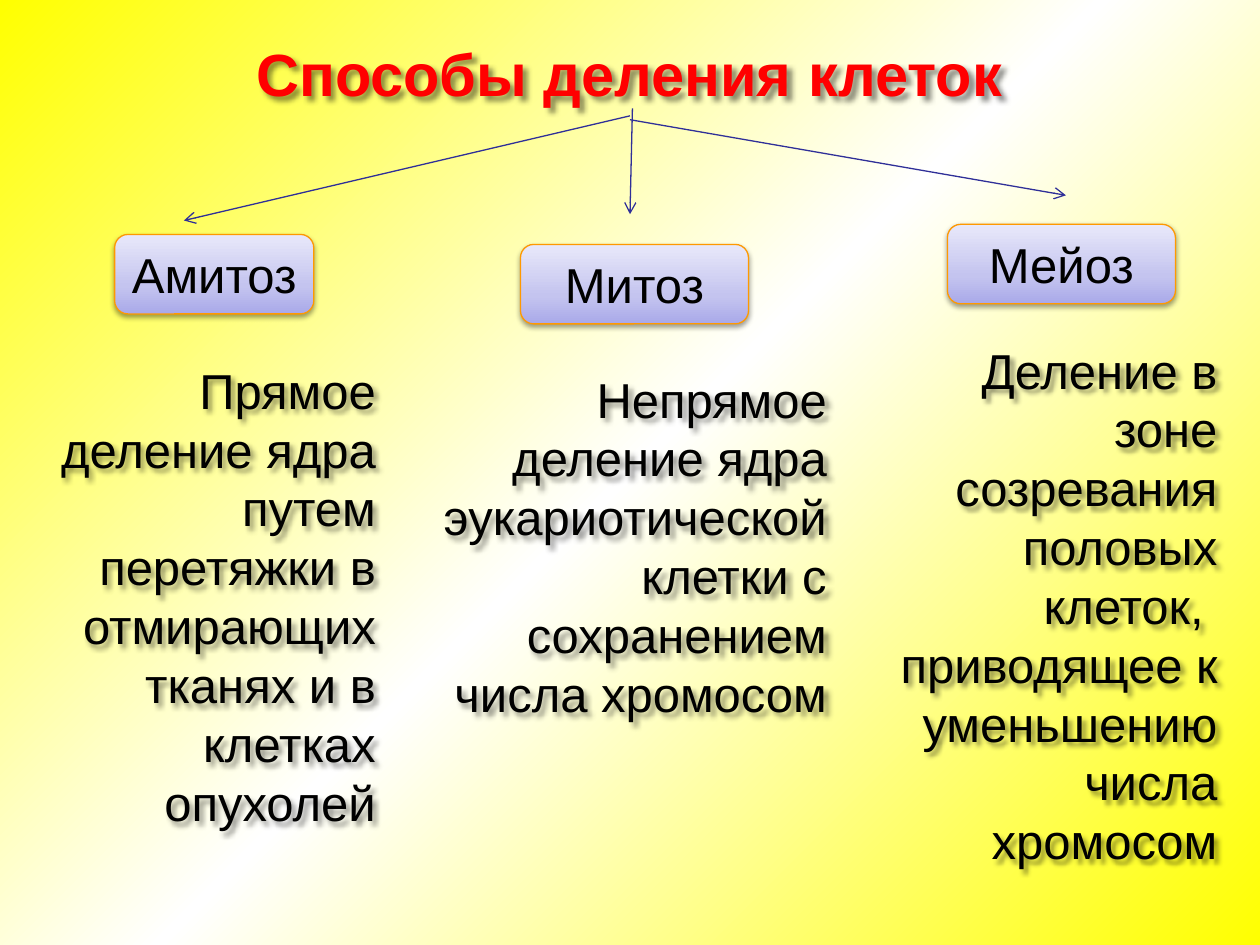
from dataclasses import dataclass
from typing import Any

from lxml.etree import SubElement
from pptx import Presentation
from pptx.dml.color import RGBColor
from pptx.enum.shapes import MSO_CONNECTOR, MSO_SHAPE
from pptx.enum.text import MSO_ANCHOR, MSO_AUTO_SIZE, PP_ALIGN
from pptx.oxml.ns import qn
from pptx.util import Pt


@dataclass(frozen=True)
class Theme:
    """Colours, fonts and type sizes of the slide."""

    font: str = "Arial"
    body: float = 28
    head: float = 34
    ink: str = "000000"
    title: str = "FF0000"
    arrow: str = "2F2F98"
    edge: str = "FF9900"
    line: float = 0.75
    back: tuple = ((0, "FFFF00"), (50, "FFFFFF"), (100, "FFFF00"))
    box: tuple = ((0, "A9A9E9"), (35, "C4C4EF"), (100, "E8E8FA"))


@dataclass(frozen=True)
class Area:
    """A rectangle in points."""

    left: float
    top: float
    width: float
    height: float

    def place(self) -> tuple:
        """Return the four lengths for python-pptx."""
        return Pt(self.left), Pt(self.top), Pt(self.width), Pt(self.height)


@dataclass(frozen=True)
class Kind:
    """A kind of cell division with its arrow, label box and text."""

    name: str
    label: Area
    wrap: bool
    text: str
    body: Area
    start: tuple
    end: tuple


THEME = Theme()
KINDS = (
    Kind("Амитоз", Area(65.5, 134, 113.8, 45.4), False,
         "Прямое деление ядра путем перетяжки в отмирающих тканях и в клетках опухолей",
         Area(20.2, 202.3, 201.6, 278.6), (360, 66.2), (105.1, 126)),
    Kind("Митоз", Area(297.4, 139.7, 130.3, 45.4), True,
         "Непрямое деление ядра эукариотической клетки с сохранением числа хромосом",
         Area(241.2, 207.4, 238.3, 247), (361.4, 61.9), (360, 122.4)),
    Kind("Мейоз", Area(541.4, 128.2, 130.3, 45.4), True,
         "Деление в зоне созревания половых клеток,  приводящее к уменьшению числа хромосом",
         Area(490.3, 190.8, 212.4, 312.5), (360, 68.4), (609.1, 111.6)),
)


def blend(fill: Any, root: Any, stops: tuple, angle: float) -> None:
    """Fill with a linear gradient, its angle counted anticlockwise."""
    fill.gradient()
    fill.gradient_angle = angle
    group = root.find(".//" + qn("a:gsLst"))
    for old in list(group):
        group.remove(old)
    for pos, tint in stops:
        stop = SubElement(group, qn("a:gs"), pos=str(pos * 1000))
        SubElement(stop, qn("a:srgbClr"), val=tint)


def shade(shape: Any, blur: float, dist: float, angle: int, alpha: int) -> None:
    """Give a shape a soft black shadow."""
    shape.shadow.inherit = False
    group = shape.element.spPr.find(qn("a:effectLst"))
    cast = SubElement(group, qn("a:outerShdw"), blurRad=str(Pt(blur)),
                      dist=str(Pt(dist)), dir=str(angle * 60000),
                      algn="ctr", rotWithShape="0")
    tint = SubElement(cast, qn("a:srgbClr"), val=THEME.ink)
    SubElement(tint, qn("a:alpha"), val=str(alpha * 1000))


def write(shape: Any, text: str, align: Any, size: float, tint: str,
          bold: bool = False, wrap: bool = True) -> None:
    """Set the one paragraph of a shape."""
    frame = shape.text_frame
    frame.text = text
    frame.word_wrap = wrap
    frame.auto_size = MSO_AUTO_SIZE.NONE
    para = frame.paragraphs[0]
    para.alignment = align
    font = para.font
    font.name, font.size, font.bold = THEME.font, Pt(size), bold
    font.color.rgb = RGBColor.from_string(tint)


def add_arrow(slide: Any, kind: Kind) -> None:
    """Draw the arrow from the title to a kind."""
    ends = [Pt(n) for n in kind.start + kind.end]
    link = slide.shapes.add_connector(MSO_CONNECTOR.STRAIGHT, *ends)
    link.line.color.rgb = RGBColor.from_string(THEME.arrow)
    link.line.width = Pt(THEME.line)
    props = link.element.spPr
    SubElement(props.find(qn("a:ln")), qn("a:tailEnd"), type="arrow")
    SubElement(props, qn("a:effectLst"))


def add_label(slide: Any, kind: Kind) -> None:
    """Draw the rounded box that names a kind."""
    box = slide.shapes.add_shape(MSO_SHAPE.ROUNDED_RECTANGLE, *kind.label.place())
    blend(box.fill, box.element.spPr, THEME.box, 90)
    box.line.color.rgb = RGBColor.from_string(THEME.edge)
    box.line.width = Pt(THEME.line)
    shade(box, 3.1, 1.6, 90, 38)
    write(box, kind.name, PP_ALIGN.CENTER, THEME.body, THEME.ink, wrap=kind.wrap)


def add_body(slide: Any, kind: Kind) -> None:
    """Write the text that explains a kind."""
    box = slide.shapes.add_textbox(*kind.body.place())
    write(box, kind.text, PP_ALIGN.RIGHT, THEME.body, THEME.ink)
    shade(box, 3, 3, 45, 43)


def add_title(slide: Any) -> None:
    """Place and format the title."""
    title = slide.shapes.title
    title.left, title.top, title.width, title.height = Area(133.2, 15.1, 452.9, 53.3).place()
    write(title, "Способы деления клеток", PP_ALIGN.CENTER, THEME.head, THEME.title, True)
    title.text_frame.vertical_anchor = MSO_ANCHOR.MIDDLE
    shade(title, 3, 3, 45, 43)


def main() -> None:
    """Build and save the slide."""
    deck = Presentation()
    deck.slide_width, deck.slide_height = Pt(720), Pt(540)
    slide = deck.slides.add_slide(deck.slide_layouts[5])
    blend(slide.background.fill, slide.element, THEME.back, 315)
    for draw in (add_arrow, add_label, add_body):
        for kind in KINDS:
            draw(slide, kind)
    add_title(slide)
    deck.save("out.pptx")


if __name__ == "__main__":
    main()
